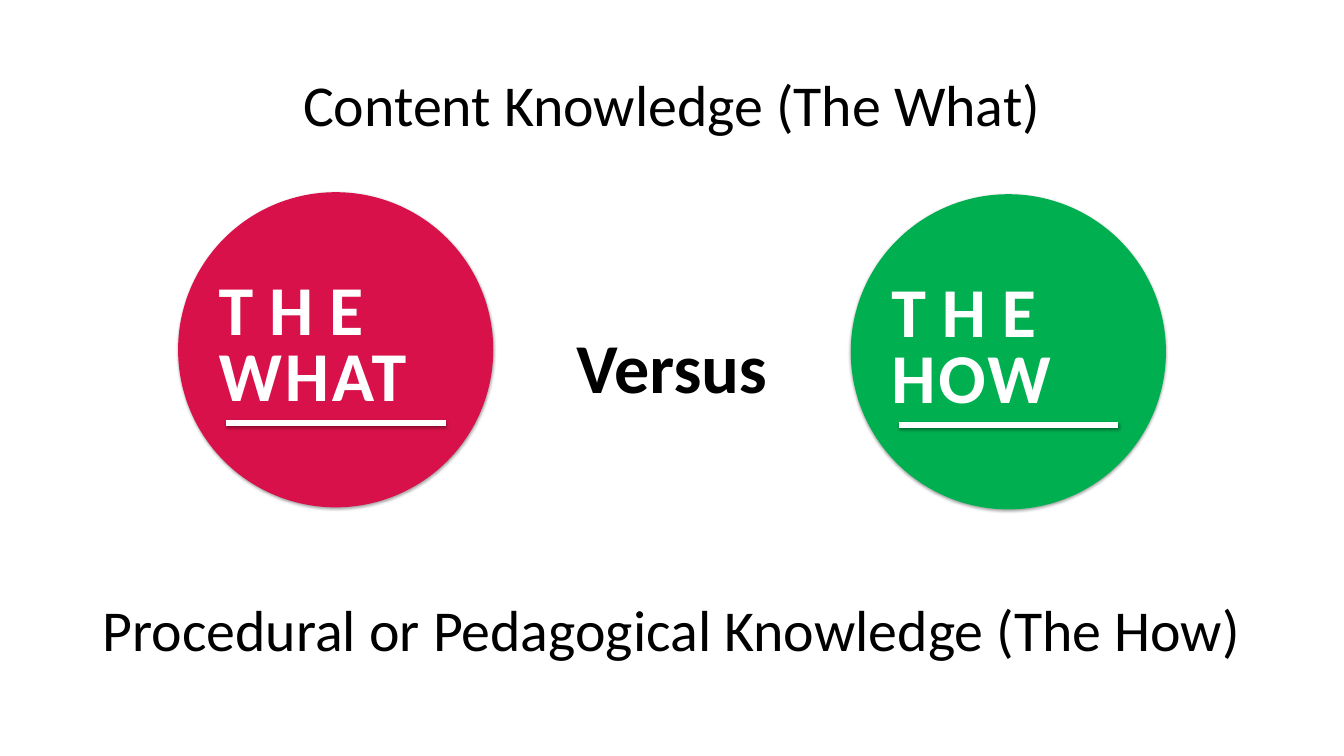
from lxml import etree
from pptx import Presentation
from pptx.dml.color import RGBColor
from pptx.enum.shapes import MSO_CONNECTOR, MSO_SHAPE
from pptx.enum.text import MSO_ANCHOR, PP_ALIGN
from pptx.oxml.ns import qn
from pptx.util import Inches, Pt

LEFT, CENTER = PP_ALIGN.LEFT, PP_ALIGN.CENTER
TOP, MIDDLE = MSO_ANCHOR.TOP, MSO_ANCHOR.MIDDLE
OVAL, STRAIGHT = MSO_SHAPE.OVAL, MSO_CONNECTOR.STRAIGHT

BLACK = RGBColor(0x00, 0x00, 0x00)
WHITE = RGBColor(0xFF, 0xFF, 0xFF)
CRIMSON = RGBColor(0xD8, 0x11, 0x4A)
GREEN = RGBColor(0x00, 0xB0, 0x50)

FONT = "Calibri"
WIDTH, HEIGHT = 20, 11.25
DIAMETER = 4.69


def add_text(shapes, box, lines, size=62, color=BLACK, bold=False,
             align=CENTER, anchor=TOP, leading=None, tracking=()):
    """Place lines of text in box; tracking gives letter spacing per line."""
    frame = shapes.add_textbox(*map(Inches, box)).text_frame
    frame.word_wrap = True
    frame.vertical_anchor = anchor
    for index, line in enumerate(lines):
        para = frame.add_paragraph() if index else frame.paragraphs[0]
        para.alignment = align
        if leading:
            para.line_spacing = Pt(leading)
        span = para.add_run()
        span.text = line
        font = span.font
        font.name, font.size, font.bold = FONT, Pt(size), bold
        font.color.rgb = color
        if tracking and tracking[index]:
            font._element.set("spc", str(int(tracking[index] * 100)))


def add_shadow(shape, opacity, distance):
    """Give a shape or connector a soft black shadow straight below it."""
    effects = etree.SubElement(shape._element.spPr, qn("a:effectLst"))
    shadow = etree.SubElement(
        effects, qn("a:outerShdw"), blurRad=str(Pt(3.1)),
        dist=str(Pt(distance)), dir="5400000", rotWithShape="0")
    black = etree.SubElement(shadow, qn("a:srgbClr"), val=str(BLACK))
    etree.SubElement(black, qn("a:alpha"), val=str(opacity * 1000))


def add_badge(page, left, top, size, word, color):
    """Draw a disc with two lines of text and a rule, as one group."""
    shapes = page.shapes.add_group_shape().shapes

    # Disc
    disc = shapes.add_shape(OVAL, *map(Inches, (left, top, size, size)))
    disc.fill.solid()
    disc.fill.fore_color.rgb = color
    disc.line.fill.background()
    add_shadow(disc, 35, 1.8)

    # Words
    box = (left + 0.108 * size, top + 0.282 * size, 0.69 * size, 0.448 * size)
    add_text(shapes, box, ("T H E", word), size=75, color=WHITE, bold=True,
             align=LEFT, leading=70, tracking=(0, 3))

    # Rule under the words
    start, end, level = (left + 0.153 * size, left + 0.849 * size,
                         top + 0.733 * size)
    rule = shapes.add_connector(
        STRAIGHT, *map(Inches, (start, level, end, level)))
    rule.line.color.rgb = WHITE
    rule.line.width = Pt(6)
    add_shadow(rule, 38, 1.6)


def main():
    deck = Presentation()
    deck.slide_width, deck.slide_height = Inches(WIDTH), Inches(HEIGHT)
    page = deck.slides.add_slide(deck.slide_layouts[6])

    # Full-width headings above and below
    add_text(page.shapes, (0, 0.65, WIDTH, 1.78),
             ["Content Knowledge (The What)"], anchor=MIDDLE)
    add_text(page.shapes, (0, 8.79, WIDTH, 1.79),
             ["Procedural or Pedagogical Knowledge (The How)"])

    # The two sides and the word between them
    add_text(page.shapes, (7.59, 4.76, 4.81, 1.36), ["Versus"],
             size=75, bold=True)
    add_badge(page, 2.65, 2.86, DIAMETER, "WHAT", CRIMSON)
    add_badge(page, WIDTH - 2.65 - DIAMETER, 2.89, DIAMETER, "HOW", GREEN)

    deck.save("out.pptx")


if __name__ == "__main__":
    main()
